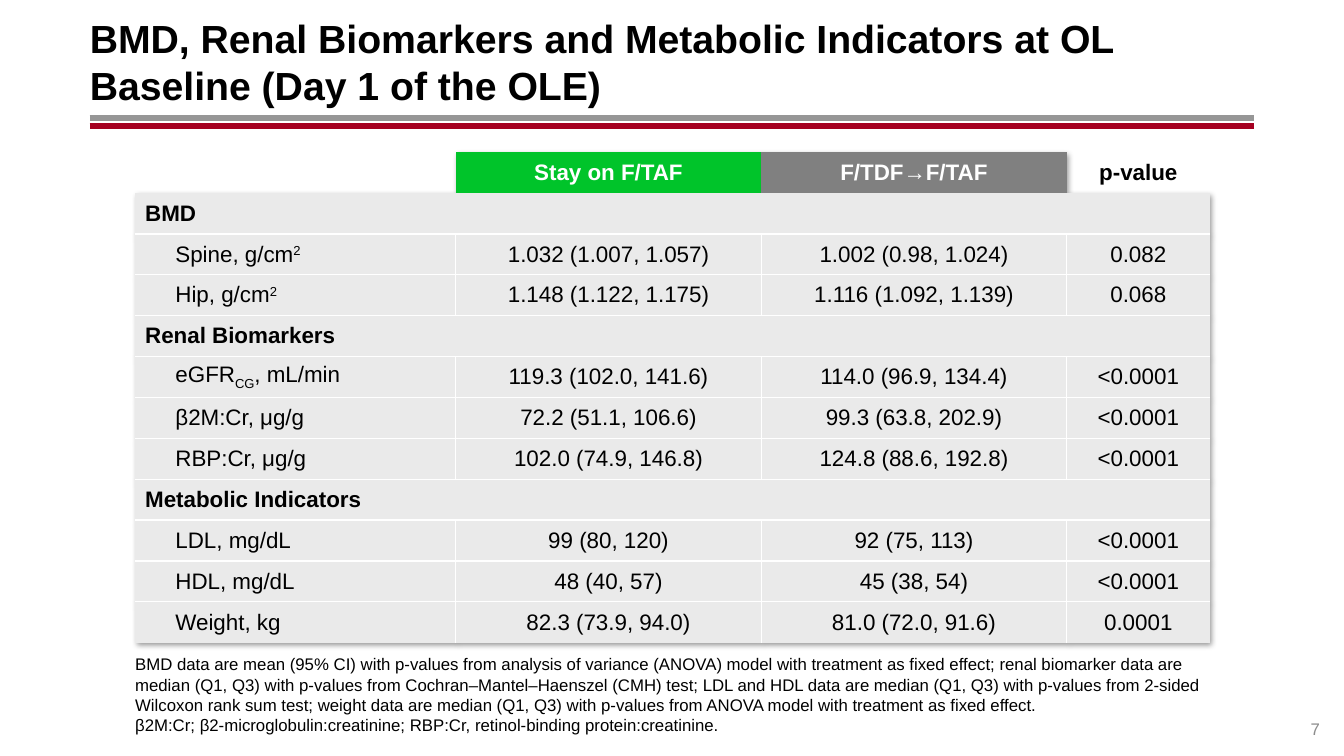
from dataclasses import dataclass

from lxml import etree
from pptx import Presentation
from pptx import table as tab
from pptx import util as u
from pptx.dml.color import RGBColor
from pptx.enum import shapes, text
from pptx.oxml import ns
from pptx.slide import Slide
from pptx.text import text as txt


@dataclass(frozen=True)
class Theme:
    font: str = "Arial"
    black: str = "000000"
    white: str = "FFFFFF"
    green: str = "00C42A"
    gray: str = "808080"
    pale: str = "EAEAEA"
    silver: str = "969696"
    red: str = "A50021"
    dim: str = "8C8C8C"
    title: float = 28
    cell: float = 16
    note: float = 12
    rule: float = 4.25
    grid: float = 1


@dataclass(frozen=True)
class Part:
    text: str
    base: int = 0  # baseline shift in percent


@dataclass(frozen=True)
class Row:
    label: tuple[Part, ...]
    vals: tuple[str, ...] = ()  # empty for a section row


@dataclass(frozen=True)
class Head:
    text: str
    fill: str | None
    color: str


@dataclass(frozen=True)
class Rule:
    y: float
    color: str


@dataclass(frozen=True)
class Box:
    text: str
    at: tuple[float, float, float, float]
    color: str
    align: text.PP_ALIGN


T = Theme()
LEFT, CENTER, RIGHT = text.PP_ALIGN.LEFT, text.PP_ALIGN.CENTER, text.PP_ALIGN.RIGHT
TITLE = "BMD, Renal Biomarkers and Metabolic Indicators at OL Baseline (Day 1 of the OLE)"
NOTE = (
    "BMD data are mean (95% CI) with p-values from analysis of variance (ANOVA) model "
    "with treatment as fixed effect; renal biomarker data are median (Q1, Q3) with "
    "p-values from Cochran–Mantel–Haenszel (CMH) test; LDL and HDL data are median "
    "(Q1, Q3) with p-values from 2-sided Wilcoxon rank sum test; weight data are median "
    "(Q1, Q3) with p-values from ANOVA model with treatment as fixed effect. \v"
    "β2M:Cr; β2-microglobulin:creatinine; RBP:Cr, retinol-binding protein:creatinine."
)
RULES = (Rule(1.17, T.silver), Rule(1.25, T.red))
BOXES = (
    Box(NOTE, (1.34, 6.48, 10.65, 0.81), T.black, LEFT),
    Box("7", (12.44, 6.93, 0.65, 0.4), T.dim, RIGHT),
)
HEADS = (
    Head("", None, T.black),
    Head("Stay on F/TAF", T.green, T.white),
    Head("F/TDF→F/TAF", T.gray, T.white),
    Head("p-value", None, T.black),
)
WIDTHS = (3.18, 3.03, 3.03, 1.42)
SQUARE = Part("2", 30)
ROWS = (
    Row((Part("BMD"),)),
    Row((Part("Spine, g/cm"), SQUARE), ("1.032 (1.007, 1.057)", "1.002 (0.98, 1.024)", "0.082")),
    Row((Part("Hip, g/cm"), SQUARE), ("1.148 (1.122, 1.175)", "1.116 (1.092, 1.139)", "0.068")),
    Row((Part("Renal Biomarkers"),)),
    Row((Part("eGFR"), Part("CG", -25), Part(", mL/min")),
        ("119.3 (102.0, 141.6)", "114.0 (96.9, 134.4)", "<0.0001")),
    Row((Part("β2M:Cr, μg/g"),), ("72.2 (51.1, 106.6)", "99.3 (63.8, 202.9)", "<0.0001")),
    Row((Part("RBP:Cr, μg/g"),), ("102.0 (74.9, 146.8)", "124.8 (88.6, 192.8)", "<0.0001")),
    Row((Part("Metabolic Indicators"),)),
    Row((Part("LDL, mg/dL"),), ("99 (80, 120)", "92 (75, 113)", "<0.0001")),
    Row((Part("HDL, mg/dL"),), ("48 (40, 57)", "45 (38, 54)", "<0.0001")),
    Row((Part("Weight, kg"),), ("82.3 (73.9, 94.0)", "81.0 (72.0, 91.6)", "0.0001")),
)
PLAIN = "{2D5ABB26-0587-4C30-8999-92F81FD0307C}"  # table style without fill or grid
SHADOW = (
    f'<a:effectLst {ns.nsdecls("a")}><a:outerShdw blurRad="50800" dist="38100" dir="2700000" '
    'algn="tl" rotWithShape="0"><a:srgbClr val="000000"><a:alpha val="40000"/></a:srgbClr>'
    "</a:outerShdw></a:effectLst>"
)


def style(par: txt._Paragraph, size: float, color: str, bold: bool = False) -> None:
    for font in (par.font, *(run.font for run in par.runs)):
        font.name, font.size, font.bold = T.font, u.Pt(size), bold
        font.color.rgb = RGBColor.from_string(color)


def edge(cell: tab._Cell, sides: str) -> None:
    """Draw white borders on the sides given, out of LRTB."""
    props = cell._tc.get_or_add_tcPr()
    for spot, side in enumerate("LRTB"):
        line = etree.Element(ns.qn(f"a:ln{side}"), w=str(u.Pt(T.grid)))
        if side in sides:
            fill = etree.SubElement(line, ns.qn("a:solidFill"))
            etree.SubElement(fill, ns.qn("a:srgbClr"), val=T.white)
        else:
            etree.SubElement(line, ns.qn("a:noFill"))
        props.insert(spot, line)


def put(cell: tab._Cell, parts: tuple[Part, ...], fill: str | None, color: str,
        bold: bool, align: text.PP_ALIGN) -> None:
    cell.vertical_anchor = text.MSO_ANCHOR.MIDDLE
    if fill:
        cell.fill.solid()
        cell.fill.fore_color.rgb = RGBColor.from_string(fill)
    else:
        cell.fill.background()
    par = cell.text_frame.paragraphs[0]
    par.alignment = align
    for part in parts:
        run = par.add_run()
        run.text = part.text
        if part.base:
            run._r.get_or_add_rPr().set("baseline", str(part.base * 1000))
    style(par, T.cell, color, bold)


def draw_table(slide: Slide) -> None:
    count = len(ROWS) + 1
    frame = slide.shapes.add_table(count, len(WIDTHS), u.Inches(1.34), u.Inches(1.51),
                                   u.Inches(sum(WIDTHS)), u.Inches(4.87))
    grid = frame.table
    grid.first_row = grid.horz_banding = False
    props = grid._tbl.tblPr
    props.find(ns.qn("a:tableStyleId")).text = PLAIN
    props.insert(0, etree.fromstring(SHADOW))
    for col, width in zip(grid.columns, WIDTHS):
        col.width = u.Inches(width)
    for row in grid.rows:
        row.height = u.Inches(4.87 / count)
    for x, head in enumerate(HEADS):
        cell = grid.cell(0, x)
        put(cell, (Part(head.text),) if head.text else (), head.fill, head.color, True, CENTER)
        edge(cell, "")
    last = len(WIDTHS) - 1
    for y, row in enumerate(ROWS, 1):
        texts = (row.label, *((Part(val),) for val in row.vals or ("",) * last))
        for x, parts in enumerate(texts):
            cell = grid.cell(y, x)
            put(cell, parts, T.pale, T.black, not row.vals, CENTER if x else LEFT)
            sides = ("T" if y > 1 else "") + ("B" if y < count - 1 else "")
            if row.vals:
                sides += ("L" if x else "") + ("R" if x < last else "")
            edge(cell, sides)
        if row.vals:
            par = grid.cell(y, 0).text_frame.paragraphs[0]
            pad = par._p.get_or_add_pPr()
            pad.set("marL", str(u.Inches(0.3)))
            pad.set("indent", "0")


def draw_rule(slide: Slide, rule: Rule) -> None:
    y = u.Inches(rule.y)
    line = slide.shapes.add_connector(shapes.MSO_CONNECTOR.STRAIGHT,
                                      u.Inches(0.89), y, u.Inches(12.44), y)
    line.line.width = u.Pt(T.rule)
    line.line.color.rgb = RGBColor.from_string(rule.color)
    etree.SubElement(line._element.spPr, ns.qn("a:effectLst"))


def draw_title(slide: Slide) -> None:
    title = slide.shapes.title
    title.left, title.top = u.Inches(0.89), u.Inches(0.18)
    title.width, title.height = u.Inches(11.55), u.Inches(0.86)
    frame = title.text_frame
    frame.text = TITLE
    frame.margin_left = 0
    frame.auto_size = text.MSO_AUTO_SIZE.NONE
    frame.vertical_anchor = text.MSO_ANCHOR.MIDDLE
    frame.paragraphs[0].alignment = LEFT
    style(frame.paragraphs[0], T.title, T.black, True)


def draw_box(slide: Slide, box: Box) -> None:
    frame = slide.shapes.add_textbox(*map(u.Inches, box.at)).text_frame
    frame.word_wrap = True
    frame.margin_left = frame.margin_right = frame.margin_top = frame.margin_bottom = 0
    frame.vertical_anchor = text.MSO_ANCHOR.BOTTOM
    par = frame.paragraphs[0]
    par.text = box.text
    par.alignment = box.align
    style(par, T.note, box.color)


def main() -> None:
    deck = Presentation()
    deck.slide_width, deck.slide_height = u.Inches(13.33), u.Inches(7.5)
    slide = deck.slides.add_slide(deck.slide_layouts[5])
    for rule in RULES:
        draw_rule(slide, rule)
    draw_title(slide)
    for box in BOXES:
        draw_box(slide, box)
    draw_table(slide)
    deck.save("out.pptx")


if __name__ == "__main__":
    main()
